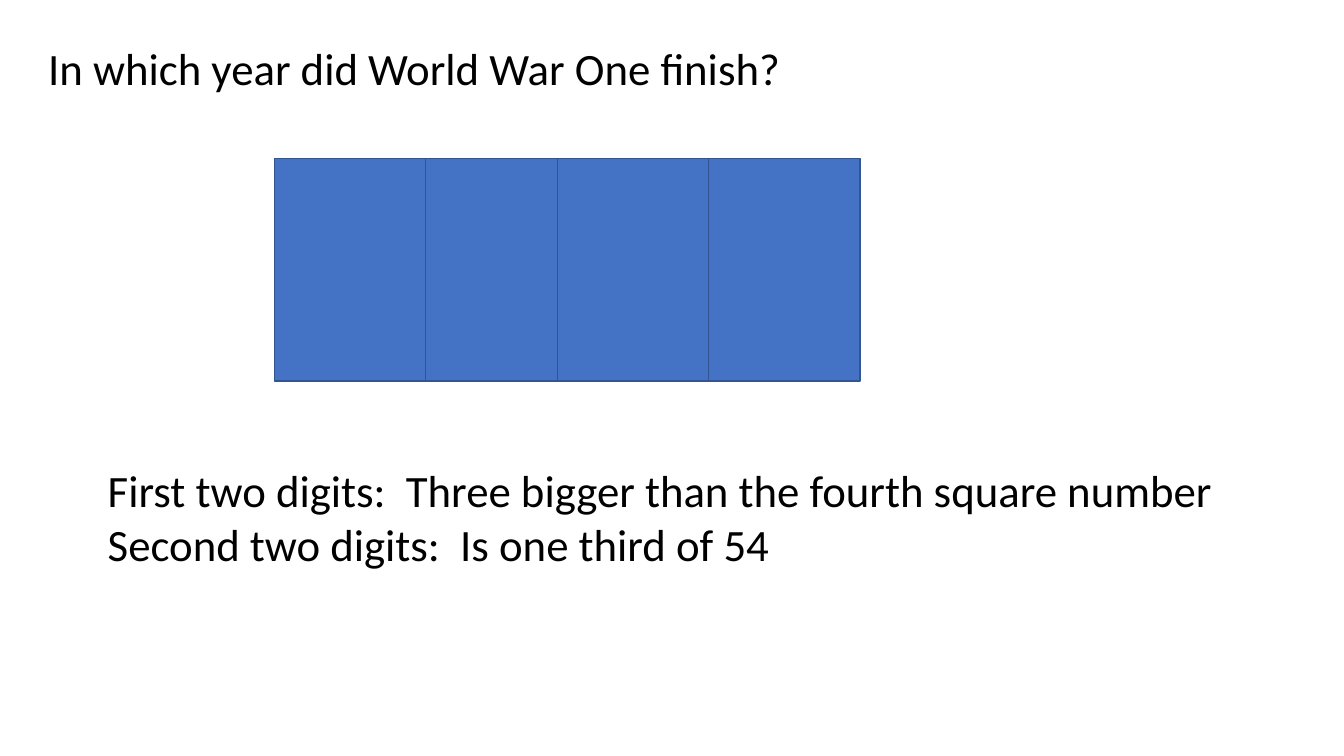
from dataclasses import dataclass

from pptx import Presentation
from pptx.dml.color import RGBColor
from pptx.enum.shapes import MSO_SHAPE
from pptx.util import Inches, Pt


@dataclass(frozen=True)
class Theme:
    font: str = "Calibri"
    ink: RGBColor = RGBColor(0x00, 0x00, 0x00)
    tile: RGBColor = RGBColor(0x44, 0x72, 0xC4)
    edge: RGBColor = RGBColor(0x32, 0x54, 0x91)
    body: int = 32


THEME = Theme()


def add_text(slide, box, lines):
    shape = slide.shapes.add_textbox(*map(Inches, box))
    frame = shape.text_frame
    frame.word_wrap = True
    frame.text = "\n".join(lines)
    for para in frame.paragraphs:
        for run in para.runs:
            run.font.name = THEME.font
            run.font.size = Pt(THEME.body)
            run.font.color.rgb = THEME.ink


def add_tile(slide, left, top, width, height):
    box = map(Inches, (left, top, width, height))
    tile = slide.shapes.add_shape(MSO_SHAPE.RECTANGLE, *box)
    tile.shadow.inherit = False
    tile.fill.solid()
    tile.fill.fore_color.rgb = THEME.tile
    tile.line.color.rgb = THEME.edge
    tile.line.width = Pt(1)


def main():
    deck = Presentation()
    deck.slide_width = Inches(13.33)
    deck.slide_height = Inches(7.5)
    slide = deck.slides.add_slide(deck.slide_layouts[6])

    # Question
    question = ["In which year did World War One finish?"]
    add_text(slide, (0.38, 0.36, 11.9, 0.64), question)

    # Two pairs of tiles, one tile per digit
    width = 1.5
    for pair in (2.72, 5.53):
        for digit in range(2):
            add_tile(slide, pair + digit * width, 1.57, width, 2.21)

    # Clues
    clues = [
        "First two digits:  Three bigger than the fourth square number",
        "Second two digits:  Is one third of 54",
    ]
    add_text(slide, (0.97, 4.54, 11.46, 1.18), clues)

    deck.save("out.pptx")


if __name__ == "__main__":
    main()
